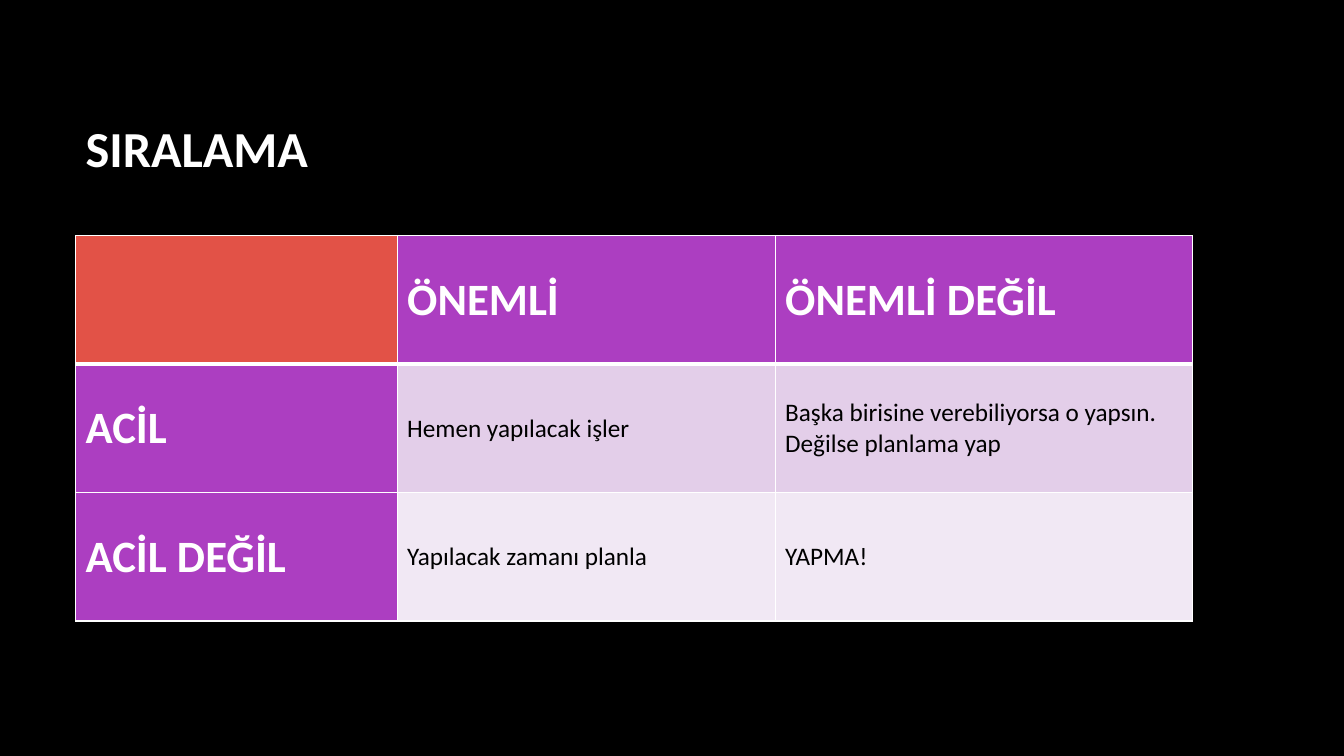
from dataclasses import dataclass

from lxml import etree
from pptx import Presentation
from pptx.dml.color import RGBColor
from pptx.enum import text
from pptx.oxml import ns
from pptx.util import Pt


@dataclass(frozen=True)
class Theme:
    font: str = "Calibri"
    background: str = "000000"
    light: str = "FFFFFF"
    dark: str = "000000"
    corner: str = "E25247"
    heading: str = "AC3EC1"
    urgent: str = "E3CEE9"
    not_urgent: str = "F1E8F4"
    title_size: int = 36
    heading_size: int = 32
    body_size: int = 18
    thin_line: float = 1
    thick_line: float = 3


THEME = Theme()


@dataclass(frozen=True)
class MatrixCell:
    words: str
    fill: str = THEME.heading
    color: str = THEME.light
    size: int = THEME.heading_size
    bold: bool = True


def action(words: str, fill: str) -> MatrixCell:
    return MatrixCell(words, fill, THEME.dark, THEME.body_size, False)


MATRIX = [
    [MatrixCell("", THEME.corner), MatrixCell("ÖNEMLİ"), MatrixCell("ÖNEMLİ DEĞİL")],
    [
        MatrixCell("ACİL"),
        action("Hemen yapılacak işler", THEME.urgent),
        action("Başka birisine verebiliyorsa o yapsın. Değilse planlama yap", THEME.urgent),
    ],
    [
        MatrixCell("ACİL DEĞİL"),
        action("Yapılacak zamanı planla", THEME.not_urgent),
        action("YAPMA!", THEME.not_urgent),
    ],
]
LEFT, WIDTH = 54, 797.8
COLUMN_WIDTHS = [229.7, 270, 298.1]
ROW_HEIGHT = 91.7


def style_font(para, size: int, color: str, bold: bool) -> None:
    font = para.font
    font.name = THEME.font
    font.size = Pt(size)
    font.bold = bold
    font.color.rgb = RGBColor.from_string(color)


def add_borders(cell, bottom: float, top: float) -> None:
    properties = cell._tc.get_or_add_tcPr()
    widths = {"lnL": THEME.thin_line, "lnR": THEME.thin_line, "lnT": top, "lnB": bottom}
    for position, (side, width) in enumerate(widths.items()):
        line = etree.Element(ns.qn(f"a:{side}"), w=str(Pt(width)))
        fill = etree.SubElement(line, ns.qn("a:solidFill"))
        etree.SubElement(fill, ns.qn("a:srgbClr"), val=THEME.light)
        properties.insert(position, line)


def add_title(page, words: str) -> None:
    title = page.shapes.title
    title.left, title.top, title.width, title.height = Pt(LEFT), Pt(48), Pt(WIDTH), Pt(114.5)
    frame = title.text_frame
    frame.text = words
    frame.word_wrap = True
    frame.auto_size = text.MSO_AUTO_SIZE.NONE
    frame.vertical_anchor = text.MSO_ANCHOR.MIDDLE
    para = frame.paragraphs[0]
    para.alignment = text.PP_ALIGN.LEFT
    style_font(para, THEME.title_size, THEME.light, True)


def add_matrix(page, rows: list[list[MatrixCell]]) -> None:
    table = page.shapes.add_table(
        len(rows), len(COLUMN_WIDTHS), Pt(LEFT), Pt(168.5), Pt(WIDTH), Pt(ROW_HEIGHT * len(rows))
    ).table
    for column, width in zip(table.columns, COLUMN_WIDTHS):
        column.width = Pt(width)
    for row_index, row in enumerate(rows):
        table.rows[row_index].height = Pt(ROW_HEIGHT)
        for column_index, entry in enumerate(row):
            cell = table.cell(row_index, column_index)
            cell.fill.solid()
            cell.fill.fore_color.rgb = RGBColor.from_string(entry.fill)
            cell.vertical_anchor = text.MSO_ANCHOR.MIDDLE
            cell.text = entry.words
            style_font(cell.text_frame.paragraphs[0], entry.size, entry.color, entry.bold)
            add_borders(
                cell,
                bottom=THEME.thick_line if row_index == 0 else THEME.thin_line,
                top=THEME.thick_line if row_index == 1 else THEME.thin_line,
            )


def main() -> None:
    deck = Presentation()
    deck.slide_width, deck.slide_height = Pt(960), Pt(540)
    page = deck.slides.add_slide(deck.slide_layouts.get_by_name("Title Only"))
    page.background.fill.solid()
    page.background.fill.fore_color.rgb = RGBColor.from_string(THEME.background)
    add_title(page, "SIRALAMA")
    add_matrix(page, MATRIX)
    deck.save("out.pptx")


if __name__ == "__main__":
    main()
